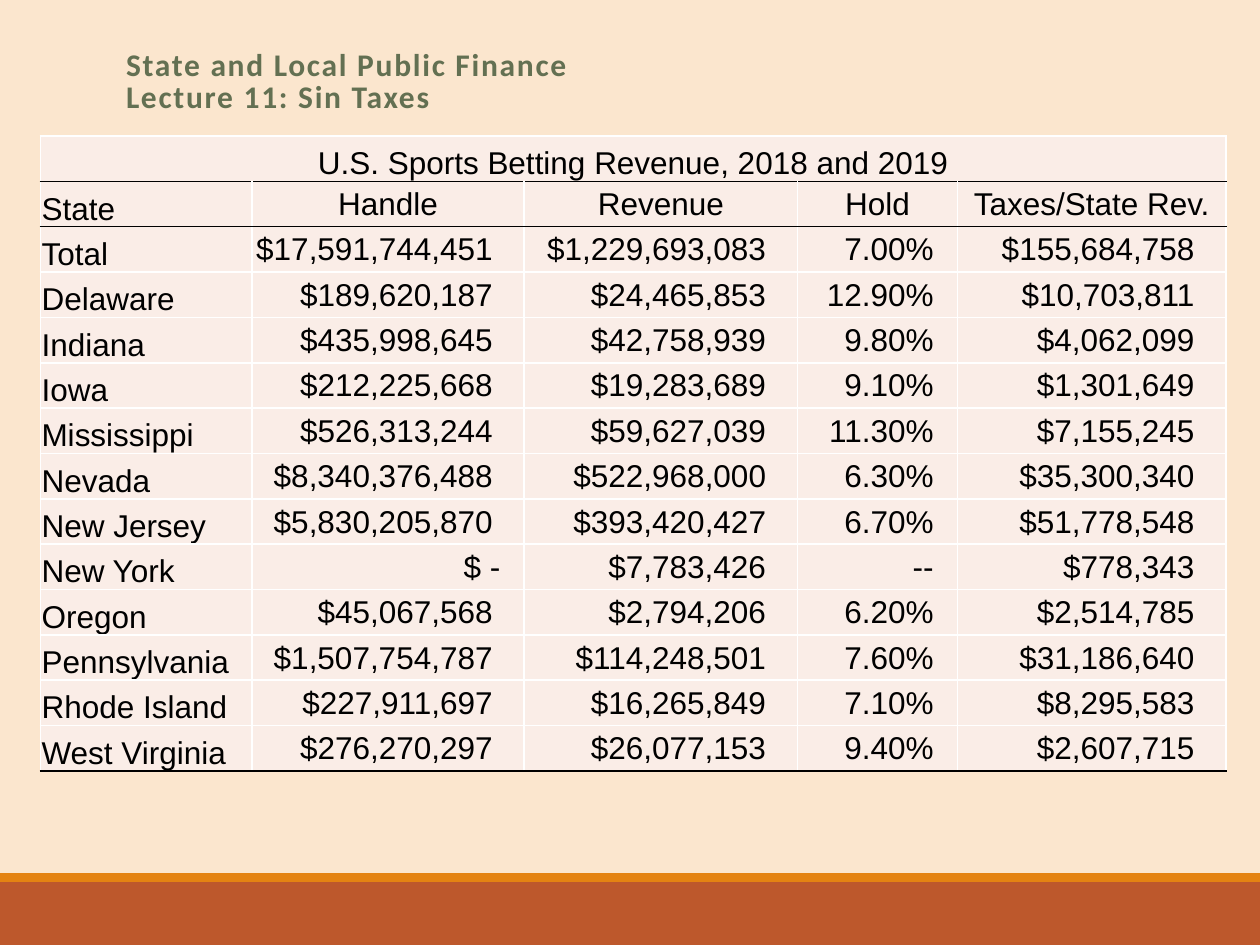
from dataclasses import dataclass

from lxml.etree import SubElement
from pptx import Presentation
from pptx.dml.color import RGBColor
from pptx.enum.shapes import MSO_SHAPE as Shape
from pptx.enum.text import MSO_ANCHOR as Anchor, PP_ALIGN as Align
from pptx.oxml import parse_xml
from pptx.oxml.ns import nsdecls, qn
from pptx.util import Inches, Pt


@dataclass(frozen=True)
class Theme:
    page: str = "FBE6CE"
    footer: str = "BD582C"
    stripe: str = "E48312"
    title: str = "637052"
    cell: str = "FAEDE7"
    ink: str = "000000"
    grid: str = "FFFFFF"
    title_font: str = "Calibri"
    table_font: str = "Arial"
    size: int = 18
    border: int = 1


TITLE = ["State and Local Public Finance", "Lecture 11: Sin Taxes"]
CAPTION = "U.S. Sports Betting Revenue, 2018 and 2019"
HEADER = ["State", "Handle", "Revenue", "Hold", "Taxes/State Rev."]
STATES = [
    ["Total", "$17,591,744,451", "$1,229,693,083", "7.00%", "$155,684,758"],
    ["Delaware", "$189,620,187", "$24,465,853", "12.90%", "$10,703,811"],
    ["Indiana", "$435,998,645", "$42,758,939", "9.80%", "$4,062,099"],
    ["Iowa", "$212,225,668", "$19,283,689", "9.10%", "$1,301,649"],
    ["Mississippi", "$526,313,244", "$59,627,039", "11.30%", "$7,155,245"],
    ["Nevada", "$8,340,376,488", "$522,968,000", "6.30%", "$35,300,340"],
    ["New Jersey", "$5,830,205,870", "$393,420,427", "6.70%", "$51,778,548"],
    ["New York", "$ -", "$7,783,426", "--", "$778,343"],
    ["Oregon", "$45,067,568", "$2,794,206", "6.20%", "$2,514,785"],
    ["Pennsylvania", "$1,507,754,787", "$114,248,501", "7.60%", "$31,186,640"],
    ["Rhode Island", "$227,911,697", "$16,265,849", "7.10%", "$8,295,583"],
    ["West Virginia", "$276,270,297", "$26,077,153", "9.40%", "$2,607,715"],
]
COLUMN_WIDTHS = [1.68, 2.16, 2.17, 1.27, 2.13]
ROW_HEIGHT = 0.36


class SlideBuilder:
    """Holds the theme and the slide being filled."""

    def __init__(self, slide, theme):
        self.slide = slide
        self.theme = theme

    def background(self):
        fill = self.slide.background.fill
        fill.solid()
        fill.fore_color.rgb = RGBColor.from_string(self.theme.page)

    def band(self, top, height, color):
        band = self.slide.shapes.add_shape(
            Shape.RECTANGLE, 0, Inches(top), Inches(10), Inches(height))
        band.shadow.inherit = False
        band.fill.solid()
        band.fill.fore_color.rgb = RGBColor.from_string(color)
        band.line.fill.background()

    def run(self, para, text, font, color, bold=False):
        run = para.add_run()
        run.text = text
        run.font.name = font
        run.font.size = Pt(self.theme.size)
        run.font.bold = bold
        run.font.color.rgb = RGBColor.from_string(color)
        return run

    def title(self, lines):
        box = self.slide.shapes.title
        box.left, box.top = Inches(0.9), Inches(0.33)
        box.width, box.height = Inches(8.25), Inches(0.65)
        frame = box.text_frame
        frame.word_wrap = True
        frame.vertical_anchor = Anchor.MIDDLE
        para = frame.paragraphs[0]
        para.alignment = Align.LEFT
        para.line_spacing = 0.85
        for index, line in enumerate(lines):
            if index:
                para.add_line_break()
            span = self.run(para, line, self.theme.title_font, self.theme.title, True)
            span.font._element.set("spc", "100")

    def borders(self, cell, top, bottom):
        """Draw all four cell edges; the side edges take the grid colour."""
        properties = cell._tc.get_or_add_tcPr()
        edges = {"lnL": self.theme.grid, "lnR": self.theme.grid,
                 "lnT": top, "lnB": bottom}
        for position, (edge, color) in enumerate(edges.items()):
            line = parse_xml(f'<a:{edge} {nsdecls("a")} w="{Pt(self.theme.border)}"/>')
            fill = SubElement(line, qn("a:solidFill"))
            SubElement(fill, qn("a:srgbClr"), val=color)
            properties.insert(position, line)

    def cell(self, cell, text, align, anchor, right_margin):
        cell.vertical_anchor = anchor
        cell.margin_left = cell.margin_top = Inches(0.01)
        cell.margin_right, cell.margin_bottom = Inches(right_margin), 0
        para = cell.text_frame.paragraphs[0]
        para.alignment = align
        self.run(para, text, self.theme.table_font, self.theme.ink)

    def table(self, caption, header, body):
        count = len(body) + 2
        frame = self.slide.shapes.add_table(
            count, len(header), Inches(0.32), Inches(1.08),
            Inches(sum(COLUMN_WIDTHS)), Inches(ROW_HEIGHT * count))
        table = frame.table
        table.first_row = table.horz_banding = False
        for column, width in zip(table.columns, COLUMN_WIDTHS):
            column.width = Inches(width)

        ruled = {0, 1, count - 1}  # rows with a dark line beneath
        edge = [self.theme.ink if row in ruled else self.theme.grid
                for row in range(count)]
        for index, row in enumerate(table.rows):
            row.height = Inches(ROW_HEIGHT)
            top = edge[index - 1] if index else self.theme.grid
            for cell in row.cells:
                cell.fill.solid()
                cell.fill.fore_color.rgb = RGBColor.from_string(self.theme.cell)
                self.borders(cell, top, edge[index])

        table.cell(0, 0).merge(table.cell(0, len(header) - 1))
        self.cell(table.cell(0, 0), caption, Align.CENTER, Anchor.BOTTOM, 0.01)
        for index, values in enumerate([header, *body], start=1):
            for column, text in enumerate(values):
                if column == 0:
                    layout = Align.LEFT, Anchor.BOTTOM, 0.01
                elif index == 1:
                    layout = Align.CENTER, Anchor.MIDDLE, 0.01
                else:
                    # Dollar amounts stand further in than the other values.
                    margin = 0.25 if text[-1].isdigit() else 0.19
                    layout = Align.RIGHT, Anchor.MIDDLE, margin
                self.cell(table.cell(index, column), text, *layout)


def main():
    deck = Presentation()
    deck.slide_width, deck.slide_height = Inches(10), Inches(7.5)
    theme = Theme()
    page = SlideBuilder(deck.slides.add_slide(deck.slide_layouts[5]), theme)
    page.background()
    page.band(7, 0.5, theme.footer)
    page.band(6.93, 0.07, theme.stripe)
    page.title(TITLE)
    page.table(CAPTION, HEADER, STATES)
    deck.save("out.pptx")


if __name__ == "__main__":
    main()
